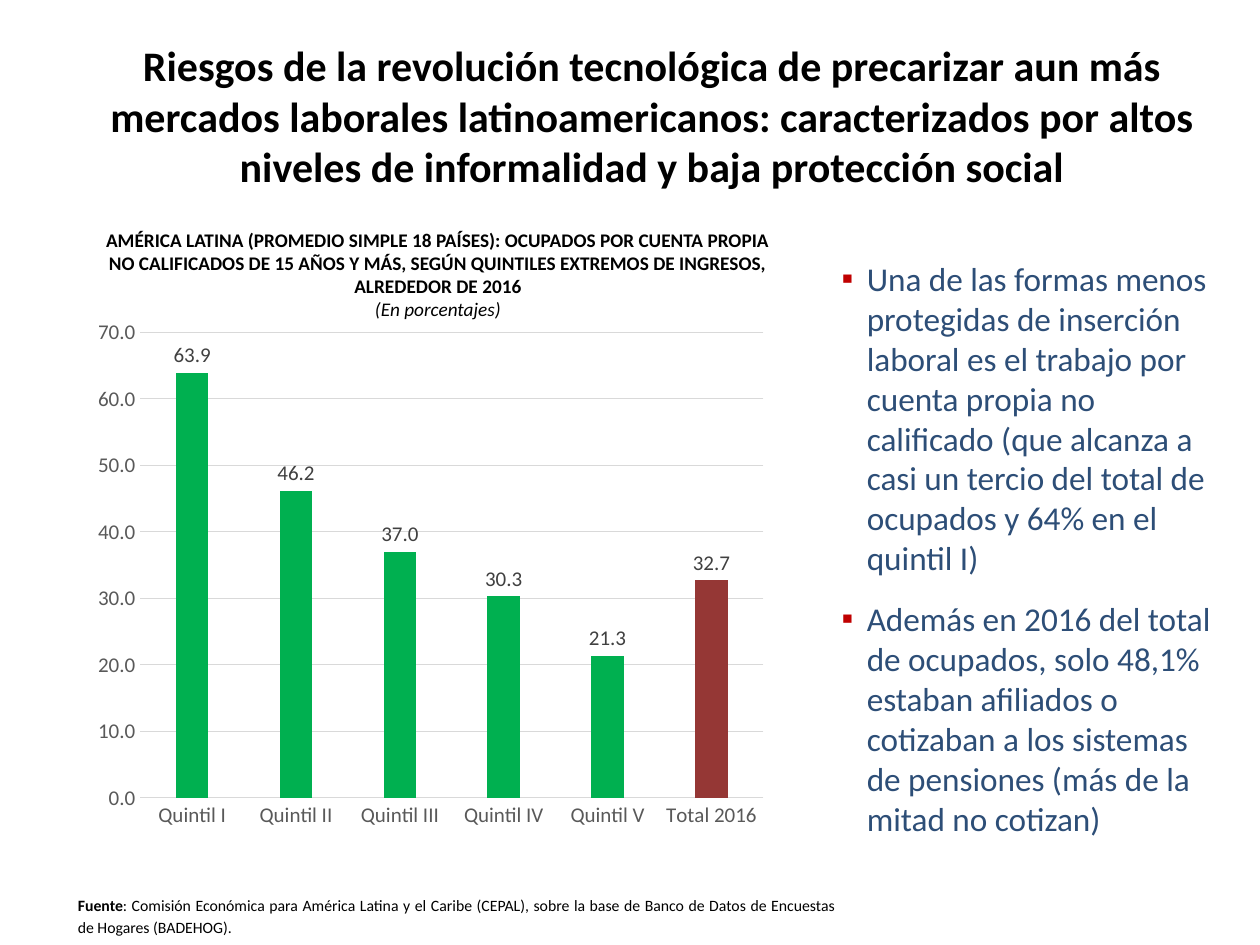
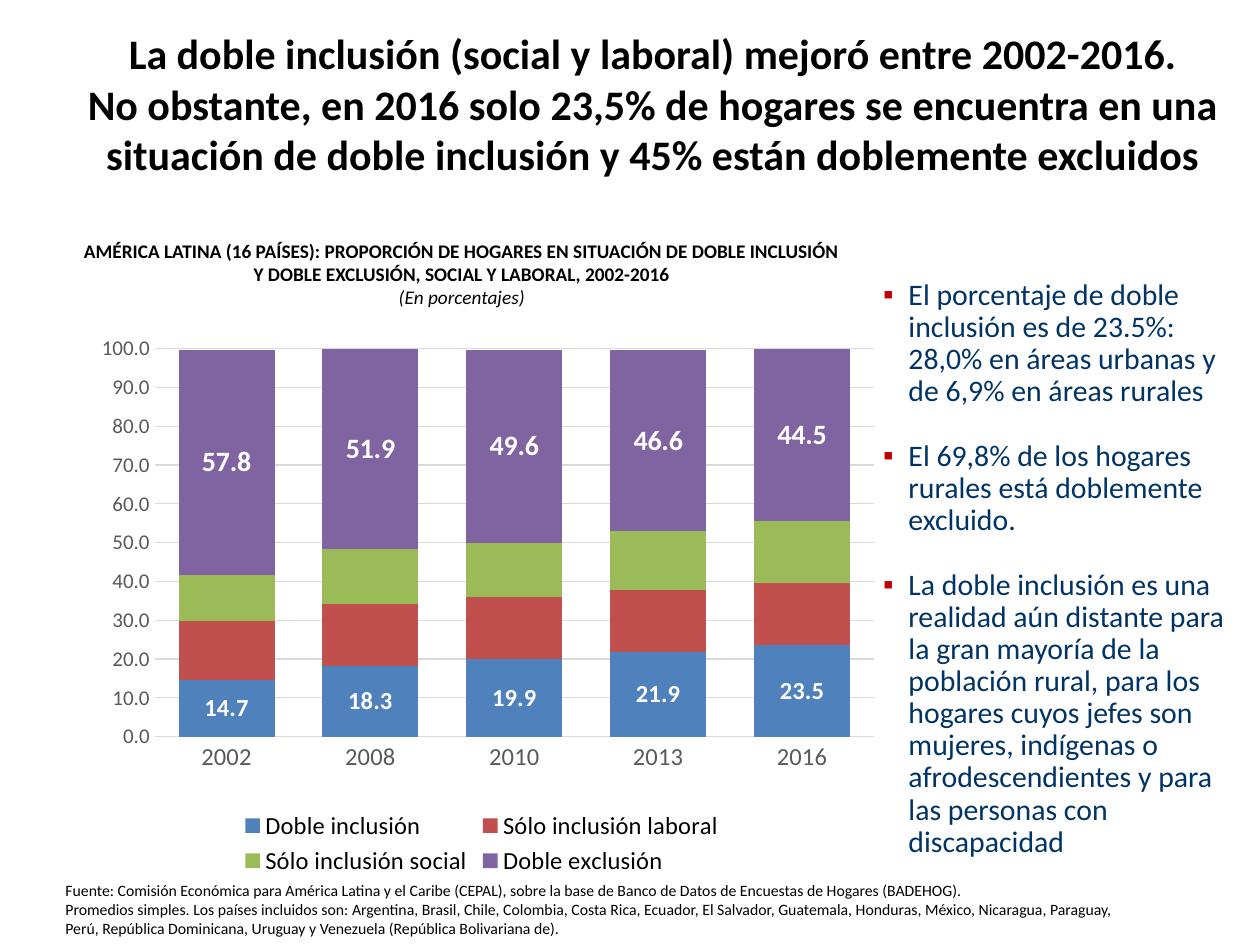
from lxml.etree import SubElement
from pptx import Presentation
from pptx.chart.data import CategoryChartData
from pptx.dml.color import RGBColor
from pptx.enum.chart import XL_CHART_TYPE, XL_LABEL_POSITION, XL_LEGEND_POSITION, XL_TICK_MARK
from pptx.enum.text import MSO_ANCHOR, MSO_AUTO_SIZE, PP_ALIGN
from pptx.oxml import parse_xml
from pptx.oxml.ns import nsdecls, qn
from pptx.util import Cm, Pt

FONT = "Calibri"
BLACK, WHITE = "000000", "FFFFFF"
BULLET_RED, AXIS_GREY, GRID_GREY, LABEL_GREY = "C00000", "595959", "D9D9D9", "404040"
GREEN, DARK_RED = "00B050", "953735"
LIST_BLUE, LIST_NAVY = "2D4E77", "003366"
ITALIC_NOTE = {"bold": False, "italic": True}


def rgb(color):
    return RGBColor.from_string(color)


def style_font(font, size, color=BLACK, bold=False, italic=False):
    font.name, font.size = FONT, Pt(size)
    font.bold, font.italic = bold, italic
    font.color.rgb = rgb(color)


def add_bullet(paragraph, indent=Cm(0.51)):
    properties = paragraph._p.get_or_add_pPr()
    properties.set("marL", str(indent))
    properties.set("indent", str(-indent))
    bullet_color = SubElement(properties, qn("a:buClr"))
    SubElement(bullet_color, qn("a:srgbClr"), val=BULLET_RED)
    SubElement(properties, qn("a:buChar"), char="▪")


def write(frame, paragraphs, align=PP_ALIGN.LEFT, spacing=1.0, gap=0, bullet=False, **font_format):
    """Fill a frame; a paragraph is a string or a list of (text, font overrides) runs."""
    frame.word_wrap = True
    frame.auto_size = MSO_AUTO_SIZE.NONE
    for index, content in enumerate(paragraphs):
        paragraph = frame.add_paragraph() if index else frame.paragraphs[0]
        if bullet:
            add_bullet(paragraph)
        paragraph.alignment = align
        paragraph.line_spacing = spacing
        paragraph.space_before = Pt(gap if index else 0)
        runs = [(content, {})] if isinstance(content, str) else content
        for text, overrides in runs:
            for line_number, line in enumerate(text.split("\n")):
                if line_number:
                    paragraph.add_line_break()
                run = paragraph.add_run()
                run.text = line
                style_font(run.font, **{**font_format, **overrides})


def place(shape, box):
    shape.left, shape.top, shape.width, shape.height = map(Cm, box)


def set_inner_plot(chart, x, y, w, h):
    """Fix the plot rectangle as fractions of the chart area."""
    plot_area = chart._chartSpace.find(".//" + qn("c:plotArea"))
    for layout in plot_area.findall(qn("c:layout")):
        plot_area.remove(layout)
    sizes = "".join(f'<c:{key} val="{value}"/>' for key, value in zip("xywh", (x, y, w, h)))
    plot_area.insert(0, parse_xml(
        f'<c:layout {nsdecls("c")}><c:manualLayout><c:layoutTarget val="inner"/>'
        f'<c:xMode val="edge"/><c:yMode val="edge"/>{sizes}</c:manualLayout></c:layout>'))


class Deck:
    def __init__(self):
        self.presentation = Presentation()
        self.presentation.slide_width, self.presentation.slide_height = Cm(25.4), Cm(19.05)
        self.slide = None

    def new_slide(self, title, box):
        self.slide = self.presentation.slides.add_slide(self.presentation.slide_layouts[1])
        heading = self.slide.shapes.title
        place(heading, box)
        write(heading.text_frame, [title], align=PP_ALIGN.CENTER, size=24, bold=True)

    def bullets(self, items, box, **text_format):
        body = self.slide.placeholders[1]
        place(body, box)
        write(body.text_frame, items, bullet=True, **text_format)

    def text(self, paragraphs, box, anchor=MSO_ANCHOR.TOP, **text_format):
        frame = self.slide.shapes.add_textbox(*map(Cm, box)).text_frame
        frame.vertical_anchor = anchor
        write(frame, paragraphs, **text_format)

    def caption(self, lines, box, **text_format):
        self.text([*lines, [("(En porcentajes)", ITALIC_NOTE)]], box,
                  align=PP_ALIGN.CENTER, size=11, bold=True, **text_format)

    def source(self, paragraphs, box, **text_format):
        self.text(paragraphs, box, size=9, **text_format)

    def column_chart(self, kind, categories, series, box, inner_plot, top, gap, overlap, size):
        """Each series is (name, values, colour)."""
        data = CategoryChartData(number_format="0.0")
        data.categories = categories
        for name, values, _ in series:
            data.add_series(name, values)
        chart = self.slide.shapes.add_chart(kind, *map(Cm, box), data).chart
        chart.has_title = chart.has_legend = False
        style_font(chart.font, size)
        plot = chart.plots[0]
        plot.gap_width, plot.overlap, plot.vary_by_categories = gap, overlap, False
        for drawn, (_, _, color) in zip(plot.series, series):
            drawn.format.fill.solid()
            drawn.format.fill.fore_color.rgb = rgb(color)
            drawn.invert_if_negative = False

        for axis, label_size in ((chart.category_axis, size), (chart.value_axis, 12)):
            axis.major_tick_mark = axis.minor_tick_mark = XL_TICK_MARK.NONE
            style_font(axis.tick_labels.font, label_size, AXIS_GREY)
        scale = chart.value_axis
        scale.minimum_scale, scale.maximum_scale, scale.major_unit = 0, top, 10
        scale.tick_labels.number_format = "0.0"
        scale.tick_labels.number_format_is_linked = False
        scale.format.line.fill.background()
        for line in (chart.category_axis.format.line, scale.major_gridlines.format.line):
            line.color.rgb, line.width = rgb(GRID_GREY), Pt(0.75)
        set_inner_plot(chart, *inner_plot)
        return chart

    def value_labels(self, series, position, **font_format):
        labels = series.data_labels
        labels.show_value = True
        labels.number_format, labels.number_format_is_linked = "0.0", False
        labels.position = position
        style_font(labels.font, **font_format)

    def bottom_legend(self, chart):
        chart.has_legend = True
        chart.legend.position = XL_LEGEND_POSITION.BOTTOM
        chart.legend.include_in_layout = False
        style_font(chart.legend.font, 14)


def own_account_slide(deck):
    deck.new_slide(
        "Riesgos de la revolución tecnológica de precarizar aun más mercados laborales "
        "latinoamericanos: caracterizados por altos niveles de informalidad y baja protección social",
        (1.32, 0.64, 23.65, 3.38))
    chart = deck.column_chart(
        XL_CHART_TYPE.COLUMN_CLUSTERED,
        [*(f"Quintil {number}" for number in ("I", "II", "III", "IV", "V")), "Total 2016"],
        [("Series 1", (63.9, 46.2, 37, 30.3, 21.3, 32.7), GREEN)],
        (1.35, 6.45, 14.78, 11.33), (0.1, 0.02, 0.85, 0.83),
        top=70, gap=219, overlap=-27, size=12)
    quintiles = chart.plots[0].series[0]
    total_fill = quintiles.points[5].format.fill
    total_fill.solid()
    total_fill.fore_color.rgb = rgb(DARK_RED)
    deck.value_labels(quintiles, XL_LABEL_POSITION.OUTSIDE_END, size=12, color=LABEL_GREY)
    deck.caption(
        ["AMÉRICA LATINA (PROMEDIO SIMPLE 18 PAÍSES): OCUPADOS POR CUENTA PROPIA",
         "NO CALIFICADOS DE 15 AÑOS Y MÁS, SEGÚN QUINTILES EXTREMOS DE INGRESOS,",
         "ALREDEDOR DE 2016"],
        (0.64, 4.47, 16.38, 2.13))
    deck.source(
        [[("Fuente", {"bold": True}),
          (": Comisión Económica para América Latina y el Caribe (CEPAL), sobre la base de "
           "Banco de Datos de Encuestas de Hogares (BADEHOG).", {})]],
        (1.32, 17.88, 15.75, 1.12), align=PP_ALIGN.JUSTIFY, spacing=1.15)
    deck.bullets(
        ["Una de las formas menos protegidas de inserción laboral es el trabajo por cuenta propia "
         "no calificado (que alcanza a casi un tercio del total de ocupados y 64% en el quintil I)",
         "Además en 2016 del total de ocupados, solo 48,1% estaban afiliados o cotizaban a los "
         "sistemas de pensiones (más de la mitad no cotizan)"],
        (16.71, 5.08, 8.26, 13.16), size=19, color=LIST_BLUE, gap=12)


def double_inclusion_slide(deck):
    deck.new_slide(
        "La doble inclusión (social y laboral) mejoró entre 2002-2016.\n"
        "No obstante, en 2016 solo 23,5% de hogares se encuentra en una situación de doble "
        "inclusión y 45% están doblemente excluidos",
        (1.07, 0.41, 24.18, 3.35))
    deck.caption(
        ["AMÉRICA LATINA (16 PAÍSES): PROPORCIÓN DE HOGARES EN SITUACIÓN DE DOBLE INCLUSIÓN",
         "Y DOBLE EXCLUSIÓN, SOCIAL Y LABORAL, 2002-2016"],
        (1.07, 4.72, 16.48, 1.6), anchor=MSO_ANCHOR.MIDDLE)
    deck.source(
        ["Fuente: Comisión Económica para América Latina y el Caribe (CEPAL), sobre la base de "
         "Banco de Datos de Encuestas de Hogares (BADEHOG).",
         "Promedios simples. Los países incluidos son: Argentina, Brasil, Chile, Colombia, "
         "Costa Rica, Ecuador, El Salvador, Guatemala, Honduras, México, Nicaragua, Paraguay, "
         "Perú, República Dominicana, Uruguay y Venezuela (República Bolivariana de)."],
        (1.07, 17.63, 21.79, 1.42))
    chart = deck.column_chart(
        XL_CHART_TYPE.COLUMN_STACKED, ["2002", "2008", "2010", "2013", "2016"],
        [("Doble inclusión", (14.7, 18.3, 19.9, 21.9, 23.5), "4F81BD"),
         ("Sólo inclusión laboral", (15, 16, 16, 16, 16), "C0504D"),
         ("Sólo inclusión social", (12, 14, 14, 15, 16), "9BBB59"),
         ("Doble exclusión", (57.8, 51.9, 49.6, 46.6, 44.5), "8064A2")],
        (1.47, 6.58, 16.48, 11.18), (0.1, 0.04, 0.88, 0.7),
        top=100, gap=50, overlap=100, size=14)
    included, _, _, excluded = chart.plots[0].series
    for series, size in ((included, 14), (excluded, 16)):
        deck.value_labels(series, XL_LABEL_POSITION.CENTER, size=size, color=WHITE, bold=True)
    deck.bottom_legend(chart)
    deck.bullets(
        ["El porcentaje de doble inclusión es de 23.5%: 28,0% en áreas urbanas y de 6,9% en "
         "áreas rurales",
         "El 69,8% de los hogares rurales está doblemente excluido.",
         "La doble inclusión es una realidad aún distante para la gran mayoría de la población "
         "rural, para los hogares cuyos jefes son mujeres, indígenas o afrodescendientes y para "
         "las personas con discapacidad"],
        (17.55, 5.51, 7.65, 12.04), size=17, color=LIST_NAVY, spacing=0.9, gap=18.5)


def main():
    deck = Deck()
    own_account_slide(deck)
    double_inclusion_slide(deck)
    deck.presentation.save("out.pptx")


if __name__ == "__main__":
    main()
